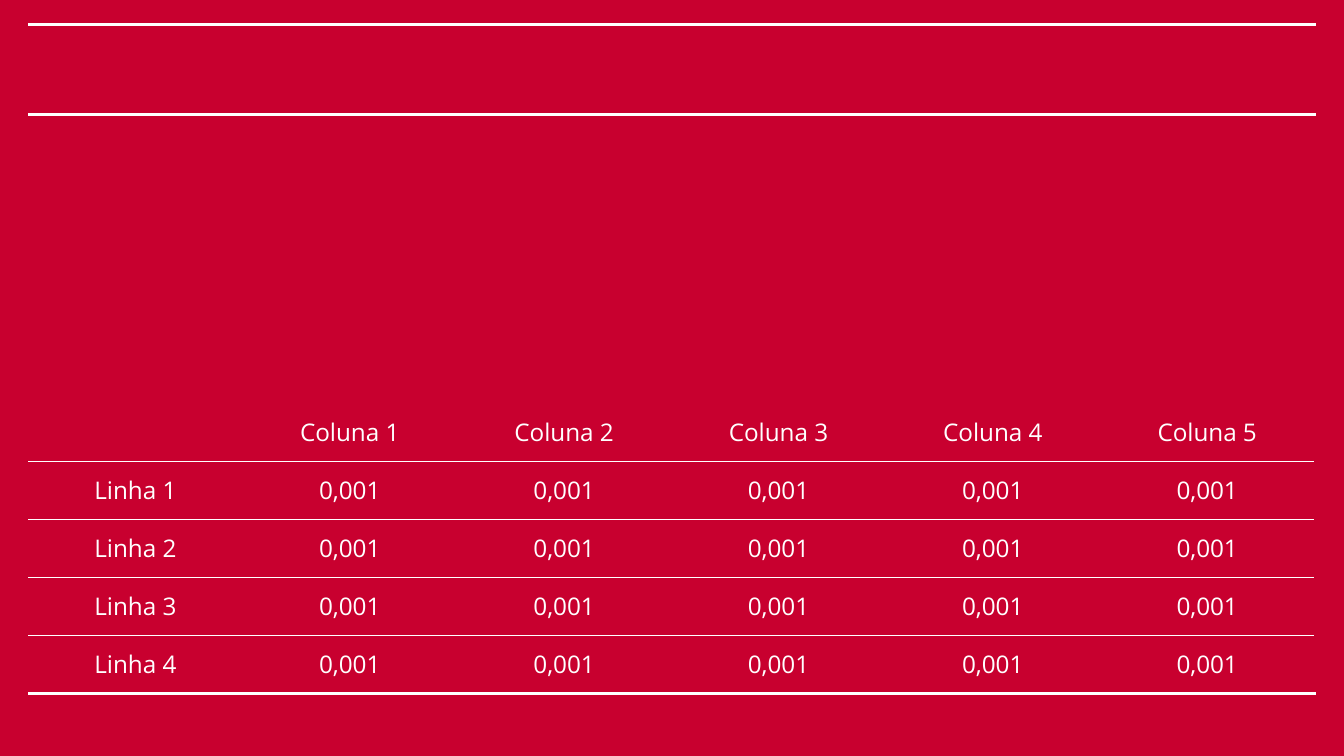
"""Build a red slide with three white rules and a five-column data table."""
from typing import NamedTuple

from lxml.etree import SubElement
from pptx import Presentation
from pptx.dml.color import RGBColor
from pptx.enum.shapes import MSO_CONNECTOR
from pptx.enum.text import MSO_ANCHOR, PP_ALIGN
from pptx.oxml import parse_xml
from pptx.oxml.ns import nsdecls, qn
from pptx.slide import Slide
from pptx.table import _Cell
from pptx.util import Inches, Pt

RED = RGBColor(0xC8, 0x00, 0x2F)
WHITE = RGBColor(0xFF, 0xFF, 0xFF)
FONT = "Open Sans"
TEXT_SIZE = Pt(13)
RULE_WIDTH = Pt(1.5)
BORDER_WIDTH = Pt(0.75)
SLIDE_WIDTH = Inches(10)
SLIDE_HEIGHT = SLIDE_WIDTH * 9 // 16
MARGIN = Inches(0.21)
SIDE_INSET = Inches(0.1)
VERTICAL_INSET = Inches(0.09)
COLUMN_COUNT, ROW_COUNT = 5, 4


class Rule(NamedTuple):
    """A full-width horizontal line at a height in inches."""

    top: float


class Grid(NamedTuple):
    """Position and total size of a table in inches, with its texts."""

    top: float
    width: float
    height: float
    rows: list[list[str]]


RULES = [Rule(5.16), Rule(0.18), Rule(0.85)]
HEADER = [""] + [f"Coluna {number}" for number in range(1, COLUMN_COUNT + 1)]
BODY = [[f"Linha {number}"] + ["0,001"] * COLUMN_COUNT for number in range(1, ROW_COUNT + 1)]
DATA_GRID = Grid(3, 9.57, 2.16, [HEADER] + BODY)


def draw_rule(slide: Slide, rule: Rule) -> None:
    """Draw a white line between the side margins."""
    height = Inches(rule.top)
    connector = slide.shapes.add_connector(
        MSO_CONNECTOR.STRAIGHT, MARGIN, height, SLIDE_WIDTH - MARGIN, height
    )
    connector.line.color.rgb = WHITE
    connector.line.width = RULE_WIDTH
    SubElement(connector._element.spPr, qn("a:effectLst"))


def set_borders(cell: _Cell, visible: set[str]) -> None:
    """Show the named sides of a cell in white and hide the others."""
    properties = cell._tc.get_or_add_tcPr()
    for position, side in enumerate("LRTB"):
        fill = (
            f'<a:solidFill><a:srgbClr val="{WHITE}"/></a:solidFill>'
            if side in visible
            else "<a:noFill/>"
        )
        border = parse_xml(
            f'<a:ln{side} {nsdecls("a")} w="{BORDER_WIDTH}">{fill}</a:ln{side}>'
        )
        properties.insert(position, border)


def fill_cell(cell: _Cell, text: str) -> None:
    """Write centred white text on a clear cell."""
    cell.fill.background()
    cell.vertical_anchor = MSO_ANCHOR.MIDDLE
    cell.margin_left = cell.margin_right = SIDE_INSET
    cell.margin_top = cell.margin_bottom = VERTICAL_INSET
    paragraph = cell.text_frame.paragraphs[0]
    paragraph.alignment = PP_ALIGN.CENTER
    paragraph.font.size = TEXT_SIZE
    if text:
        run = paragraph.add_run()
        run.text = text
        run.font.name = FONT
        run.font.size = TEXT_SIZE
        run.font.color.rgb = WHITE


def draw_table(slide: Slide, grid: Grid) -> None:
    """Draw the table with lines between its rows only."""
    table = slide.shapes.add_table(
        len(grid.rows),
        len(grid.rows[0]),
        MARGIN,
        Inches(grid.top),
        Inches(grid.width),
        Inches(grid.height),
    ).table
    table.first_row = table.horz_banding = False
    for row_index, texts in enumerate(grid.rows):
        visible = {"B"} if row_index == 0 else {"T", "B"}
        for column_index, text in enumerate(texts):
            cell = table.cell(row_index, column_index)
            fill_cell(cell, text)
            set_borders(cell, visible)


def main() -> None:
    """Create and save the presentation."""
    presentation = Presentation()
    presentation.slide_width, presentation.slide_height = SLIDE_WIDTH, SLIDE_HEIGHT
    slide = presentation.slides.add_slide(presentation.slide_layouts[6])
    slide.background.fill.solid()
    slide.background.fill.fore_color.rgb = RED
    for rule in RULES:
        draw_rule(slide, rule)
    draw_table(slide, DATA_GRID)
    presentation.save("out.pptx")


if __name__ == "__main__":
    main()
